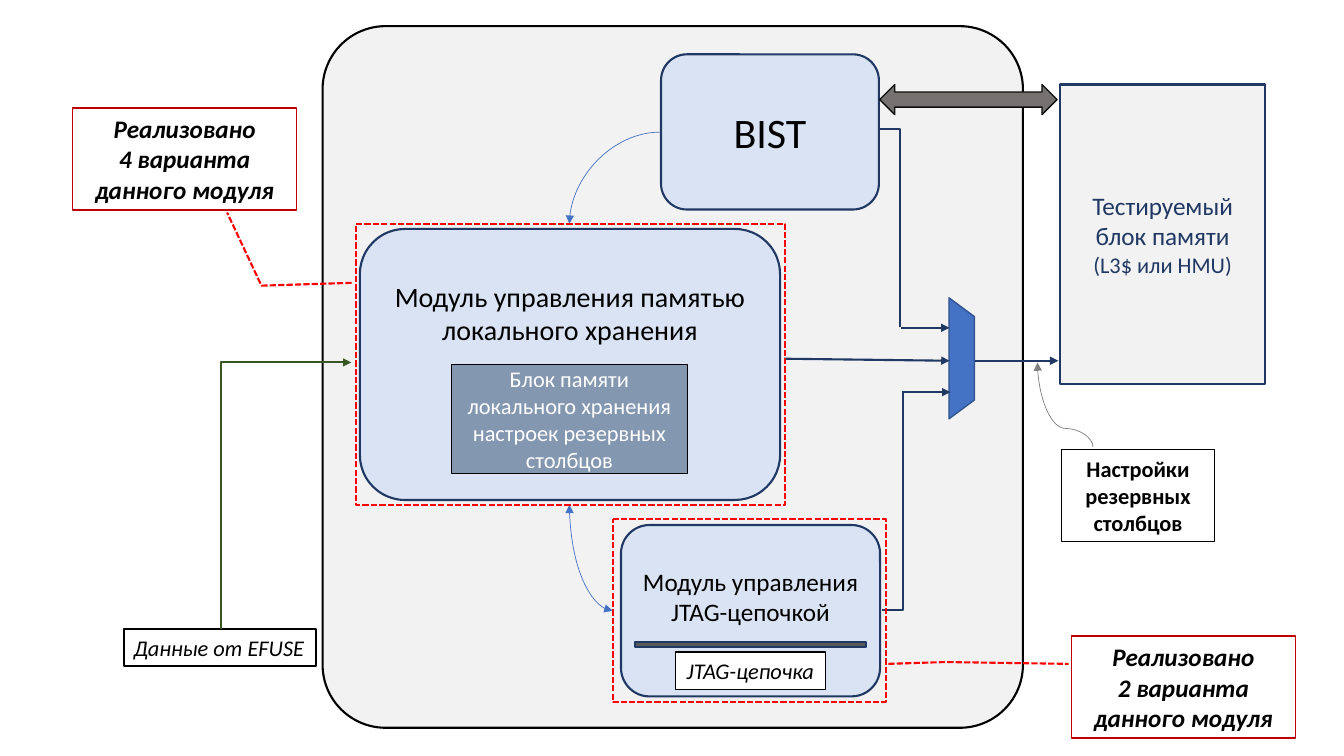
"""Draws the memory repair scheme with BIST, local storage control and JTAG chain."""
from lxml.etree import SubElement
from pptx import Presentation
from pptx.dml.color import RGBColor
from pptx.enum.dml import MSO_LINE
from pptx.enum.shapes import MSO_CONNECTOR as CONN, MSO_SHAPE as SHAPE
from pptx.enum.text import MSO_ANCHOR, PP_ALIGN
from pptx.oxml.ns import qn
from pptx.util import Cm, Pt

COLORS = {
    "black": "000000", "white": "FFFFFF", "panel": "F2F2F2", "module": "DAE3F3",
    "navy": "203864", "blue": "4472C4", "mux_edge": "325491", "slate": "8497B0",
    "gray": "808080", "arrow": "767171", "arrow_edge": "0D0D0D", "bar": "595959",
    "green": "385723", "red": "FF0000", "dark_red": "C00000",
}

prs = Presentation()
prs.slide_width, prs.slide_height = Cm(33.87), Cm(19.05)
s = prs.slides.add_slide(prs.slide_layouts[6])


def box(text, x, y, w, h, kind=SHAPE.RECTANGLE, fill=None, line="black", width=1,
        size=16, color="black", bold=False, italic=False, wrap=True, bottom=0.13,
        align=PP_ALIGN.CENTER, adj=()):
    sp = s.shapes.add_shape(kind, Cm(x), Cm(y), Cm(w), Cm(h))
    sp.shadow.inherit = False
    for i, value in enumerate(adj):
        sp.adjustments[i] = value
    if fill:
        sp.fill.solid()
        sp.fill.fore_color.rgb = RGBColor.from_string(COLORS[fill])
    else:
        sp.fill.background()
    sp.line.color.rgb = RGBColor.from_string(COLORS[line])
    sp.line.width = Pt(width)
    if text:
        tf = sp.text_frame
        tf.word_wrap = wrap
        tf.vertical_anchor = MSO_ANCHOR.MIDDLE
        tf.margin_bottom = Cm(bottom)
        for i, part in enumerate(text.split("\n")):
            p = tf.paragraphs[0] if i == 0 else tf.add_paragraph()
            p.alignment = align
            r = p.add_run()
            r.text = part
            r.font.name, r.font.size = "Calibri", Pt(size)
            r.font.bold, r.font.italic = bold, italic
            r.font.color.rgb = RGBColor.from_string(COLORS[color])
    return sp


def link(x1, y1, x2, y2, kind=CONN.STRAIGHT, preset=None, rot=0, adj=None,
         color="navy", width=1.5, ends=("tailEnd",)):
    c = s.shapes.add_connector(kind, Cm(x1), Cm(y1), Cm(x2), Cm(y2))
    c.line.color.rgb = RGBColor.from_string(COLORS[color])
    c.line.width = Pt(width)
    spPr = c._element.spPr
    for end in ends:
        SubElement(spPr.find(qn("a:ln")), qn(f"a:{end}"), type="triangle")
    SubElement(spPr, qn("a:effectLst"))
    if rot:
        spPr.find(qn("a:xfrm")).set("rot", str(rot * 60000))
    geom = spPr.find(qn("a:prstGeom"))
    if preset:
        geom.set("prst", preset)
    if adj is not None:
        SubElement(geom.find(qn("a:avLst")), qn("a:gd"), name="adj1",
                   fmla=f"val {round(adj * 100000)}")


ROUND = SHAPE.ROUNDED_RECTANGLE
MODULE = dict(kind=ROUND, fill="module", line="navy", width=1.5)
NOTE = dict(line="dark_red", size=18, bold=True, italic=True)

box("", 8.13, 0.66, 17.65, 17.68, kind=ROUND, fill="panel", width=1.5, adj=[0.09])
box("Настройки резервных столбцов", 26.75, 11.33, 3.86, 2.31, fill="white", bold=True)
box("BIST", 16.66, 1.37, 5.49, 3.91, size=30, **MODULE)
mux = box("", 22.71, 8.71, 3.05, 0.64, kind=SHAPE.TRAPEZOID, fill="blue",
          line="mux_edge", adj=[0.74])
mux.rotation = 90

link(24.56, 9.09, 26.67, 9.09)
link(22.71, 8.26, 23.93, 8.26)
link(19.76, 9.04, 23.93, 9.09)
link(22.73, 9.88, 23.95, 9.88)
link(24.94, 5.46, 19.91, 5.99, CONN.ELBOW, rot=270, adj=0.01, ends=())
link(22.23, 15.37, 22.76, 9.88, CONN.ELBOW, "bentConnector2", ends=())
link(25.78, 10.9, 27.91, 9.5, CONN.CURVE, rot=270, adj=0.22, color="gray", width=0.5)

box("", 22.17, 2.13, 4.47, 0.76, kind=SHAPE.LEFT_RIGHT_ARROW, fill="arrow", line="arrow_edge")
box("Данные от EFUSE", 3.12, 15.85, 4.85, 0.94, width=1.5, italic=True, wrap=False,
    align=PP_ALIGN.LEFT)
memory = box("Тестируемый блок памяти\n(L3$ или HMU)", 26.72, 2.13, 5.16, 7.54,
             fill="panel", line="navy", width=1.5, size=18, color="navy")
memory.text_frame.paragraphs[1].runs[0].font.size = Pt(16)

link(16.23, 13.51, 13.56, 14.6, CONN.CURVE, "curvedConnector2", rot=270,
     color="blue", width=0.5, ends=("headEnd", "tailEnd"))
link(14.35, 5.64, 16.64, 3.33, CONN.CURVE, "curvedConnector2", rot=180,
     color="blue", width=0.5)

box("Модуль управления памятью локального хранения", 9.07, 5.77, 10.59, 6.83,
    size=20, bottom=2.73, **MODULE)
box("Блок памяти локального хранения настроек резервных столбцов",
    11.38, 9.19, 5.94, 2.74, fill="slate", color="white")
box("Модуль управления JTAG-цепочкой", 15.65, 13.23, 6.53, 4.32,
    size=18, bottom=0.85, **MODULE)
box("", 16, 16.18, 5.82, 0.13, fill="bar", line="navy", width=1.5)
box("JTAG-цепочка", 17.02, 16.43, 3.78, 0.94, fill="white", italic=True)
link(10.57, 14.13, 3.86, 10.85, CONN.ELBOW, rot=90, adj=1, color="green")

for frame, pointer in [
    ((8.97, 5.64, 10.82, 7.09), (0.21, -0.01, 0.22, -0.22, -0.04, -0.3)),
    ((15.44, 13.08, 6.88, 4.62), (0.79, 1.01, 0.78, 1.22, 0.79, 1.67)),
]:
    callout = box("", *frame, kind=SHAPE.LINE_CALLOUT_2, line="red", width=1.5, adj=pointer)
    callout.line.dash_style = MSO_LINE.SQUARE_DOT

for count, x, y in [(4, 1.83, 2.72), (2, 27, 16.03)]:
    box(f"Реализовано\n{count} варианта\nданного модуля", x, y, 5.65, 2.57, **NOTE)

prs.save("out.pptx")
